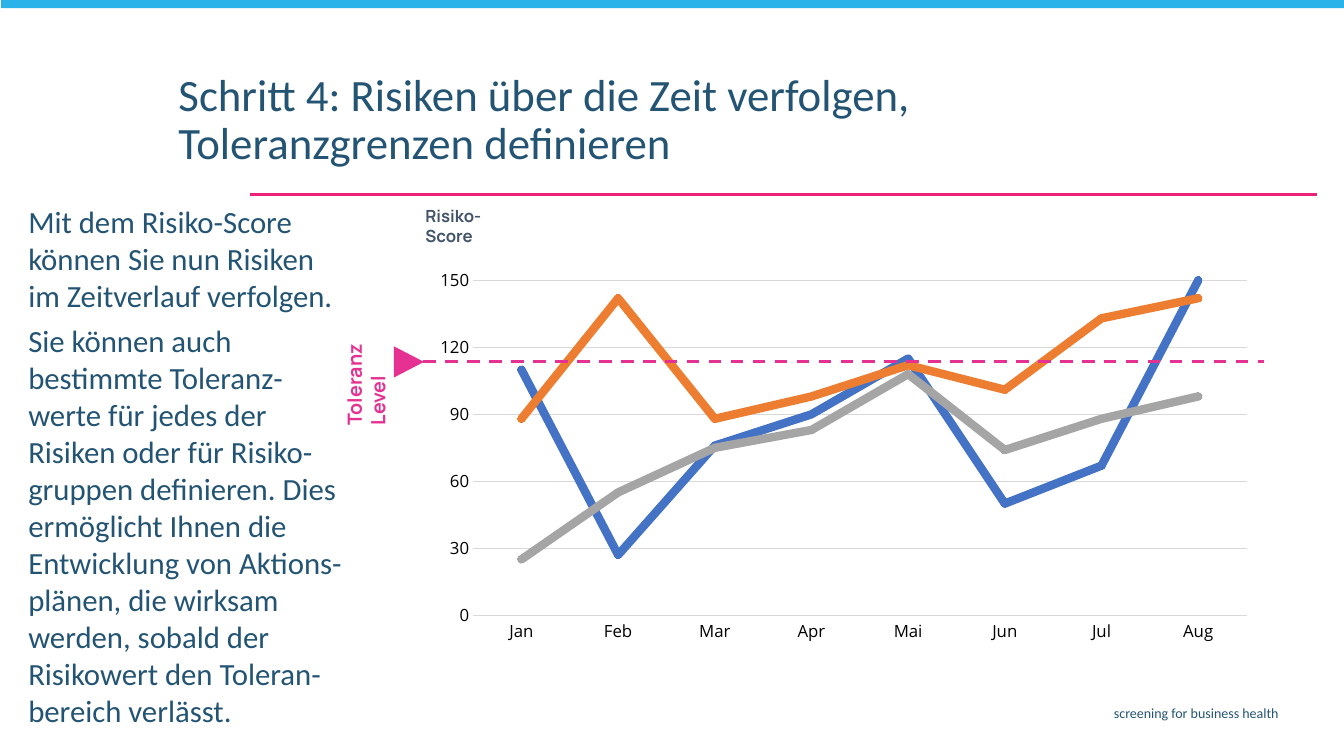
from pptx import Presentation
from pptx.chart.data import CategoryChartData
from pptx.dml.color import RGBColor
from pptx.enum.chart import XL_CHART_TYPE, XL_MARKER_STYLE, XL_TICK_MARK
from pptx.enum.dml import MSO_LINE
from pptx.enum.shapes import MSO_CONNECTOR, MSO_SHAPE
from pptx.enum.text import MSO_ANCHOR, MSO_AUTO_SIZE, PP_ALIGN
from pptx.oxml.ns import qn
from pptx.util import Inches, Pt
from lxml.etree import SubElement

NAVY, PINK, MAGENTA, SKY = "245473", "E53292", "EC2179", "29B3E8"
SLATE, GRID, BLACK = "44546A", "D9D9D9", "000000"


def colour(value):
    return RGBColor.from_string(value)


def apply(target, values):
    for name, value in values.items():
        setattr(target, name, value)


class Page:
    """Holds the deck and its slide; all lengths are percent of the slide's size."""

    def __init__(self):
        self.deck = Presentation()
        self.deck.slide_width, self.deck.slide_height = Inches(13.33), Inches(7.5)
        self.slide = self.deck.slides.add_slide(self.deck.slide_layouts[5])
        self.shapes = self.slide.shapes

    def across(self, share):
        return int(self.deck.slide_width * share / 100)

    def down(self, share):
        return int(self.deck.slide_height * share / 100)

    def area(self, left, top, width, height):
        return self.across(left), self.down(top), self.across(width), self.down(height)

    def font(self, font, size, hue, face="Calibri", bold=False):
        apply(font, {"size": Pt(size), "name": face, "bold": bold})
        font.color.rgb = colour(hue)

    def fill_text(self, box, paragraphs, style, frame_format=None, paragraph_format=None, gap=0):
        frame = box.text_frame
        apply(frame, {"word_wrap": True, "auto_size": MSO_AUTO_SIZE.NONE,
                      "vertical_anchor": MSO_ANCHOR.TOP, **(frame_format or {})})
        for index, text in enumerate(paragraphs):
            para = frame.add_paragraph() if index else frame.paragraphs[0]
            apply(para, {"alignment": PP_ALIGN.LEFT, **(paragraph_format or {})})
            para.space_before = Pt(gap if index else 0)
            span = para.add_run()
            span.text = text
            self.font(span.font, **style)

    def title(self, area, text, style):
        box = self.shapes.title
        apply(box, dict(zip(("left", "top", "width", "height"), self.area(*area))))
        self.fill_text(box, [text], style, paragraph_format={"line_spacing": 0.9})

    def text(self, area, paragraphs, style, rotation=0, **formats):
        box = self.shapes.add_textbox(*self.area(*area))
        box.rotation = rotation
        self.fill_text(box, paragraphs, style, **formats)

    def shape(self, kind, area, fill, rotation=0):
        shape = self.shapes.add_shape(kind, *self.area(*area))
        shape.rotation = rotation
        shape.shadow.inherit = False
        shape.fill.solid()
        shape.fill.fore_color.rgb = colour(fill)
        shape.line.fill.background()

    def rule(self, start, end, height, hue, width, dash=None):
        """Draws a horizontal line at the given height."""
        line = self.shapes.add_connector(
            MSO_CONNECTOR.STRAIGHT, self.across(start), self.down(height),
            self.across(end), self.down(height))
        line.line.color.rgb = colour(hue)
        apply(line.line, {"width": Pt(width), "dash_style": dash})
        SubElement(line._element.spPr, qn("a:effectLst"))

    def line_chart(self, area, categories, series_list):
        data = CategoryChartData()
        data.categories = categories
        for number, (hue, values) in enumerate(series_list, 1):
            data.add_series(f"Series {number}", values)
        chart = self.shapes.add_chart(
            XL_CHART_TYPE.LINE_MARKERS, *self.area(*area), data).chart
        apply(chart, {"has_legend": False, "has_title": False})
        self.font(chart.font, 12, BLACK, "Open Sans")
        chart.plots[0].vary_by_categories = False
        for series, (hue, values) in zip(chart.plots[0].series, series_list):
            series.smooth = False
            series.format.line.color.rgb = colour(hue)
            series.format.line.width = Pt(6)
            series._element.find(qn("c:spPr")).find(qn("a:ln")).set("cap", "rnd")
            apply(series.marker, {"style": XL_MARKER_STYLE.CIRCLE, "size": 5})
            series.marker.format.fill.solid()
            series.marker.format.fill.fore_color.rgb = colour(hue)
            series.marker.format.line.color.rgb = colour(hue)
        months, scores = chart.category_axis, chart.value_axis
        for axis in (months, scores):
            apply(axis, {"major_tick_mark": XL_TICK_MARK.NONE,
                         "minor_tick_mark": XL_TICK_MARK.NONE})
            self.font(axis.tick_labels.font, 12, BLACK, "Open Sans")
        apply(scores, {"minimum_scale": 0, "maximum_scale": 150, "major_unit": 30,
                       "has_major_gridlines": True})
        scores.format.line.fill.background()
        for line in (months.format.line, scores.major_gridlines.format.line):
            line.color.rgb = colour(GRID)
            line.width = Pt(0.75)


def main():
    page = Page()
    grow = {"auto_size": MSO_AUTO_SIZE.SHAPE_TO_FIT_TEXT}
    label = {**grow, "vertical_anchor": MSO_ANCHOR.BOTTOM}

    page.rule(18.6, 97.97, 25.73, MAGENTA, 1.5)
    page.shape(MSO_SHAPE.RECTANGLE, (0.08, 0, 99.92, 1.07), SKY)
    page.text((27.38, 92.53, 68.49, 3.87), ["screening for business health"],
              {"size": 10, "hue": NAVY}, paragraph_format={"alignment": PP_ALIGN.RIGHT})
    page.title((12.53, 8.93, 77.42, 10.13),
               "Schritt 4: Risiken über die Zeit verfolgen, Toleranzgrenzen definieren",
               {"size": 32, "hue": NAVY})
    page.text((1.43, 26.27, 25.36, 71.47), [
        "Mit dem Risiko-Score können Sie nun Risiken im Zeitverlauf verfolgen.",
        "Sie können auch bestimmte Toleranz-werte für jedes der Risiken oder für "
        "Risiko-gruppen definieren. Dies ermöglicht Ihnen die Entwicklung von "
        "Aktions-plänen, die wirksam werden, sobald der Risikowert den "
        "Toleran-bereich verlässt."],
        {"size": 22, "hue": NAVY}, gap=6,
        frame_format={**grow, "margin_left": Inches(0.09), "margin_right": Inches(0.09),
                      "margin_top": Inches(0.04), "margin_bottom": Inches(0.04)})
    page.line_chart((31.51, 34.53, 62.49, 51.47),
                    ["Jan", "Feb", "Mar", "Apr", "Mai", "Jun", "Jul", "Aug"],
                    [("4472C4", [110, 27, 76, 90, 115, 50, 67, 150]),
                     ("ED7D31", [88, 142, 88, 98, 112, 101, 133, 142]),
                     ("A5A5A5", [25, 55, 75, 83, 108, 74, 88, 98])])
    page.text((30.91, 29.2, 6.83, 4), ["Risiko-Score"],
              {"size": 12, "hue": SLATE, "face": "Manrope", "bold": True}, frame_format=label)
    page.shape(MSO_SHAPE.ISOSCELES_TRIANGLE, (29.26, 45.87, 2.33, 4), PINK, rotation=90)
    page.rule(31.51, 94.07, 47.87, PINK, 2.25, MSO_LINE.DASH)
    page.text((22.66, 45.73, 10.8, 4.53), ["Toleranz Level"],
              {"size": 14, "hue": PINK, "face": "Manrope", "bold": True},
              rotation=270, frame_format=label)
    page.deck.save("out.pptx")


if __name__ == "__main__":
    main()
